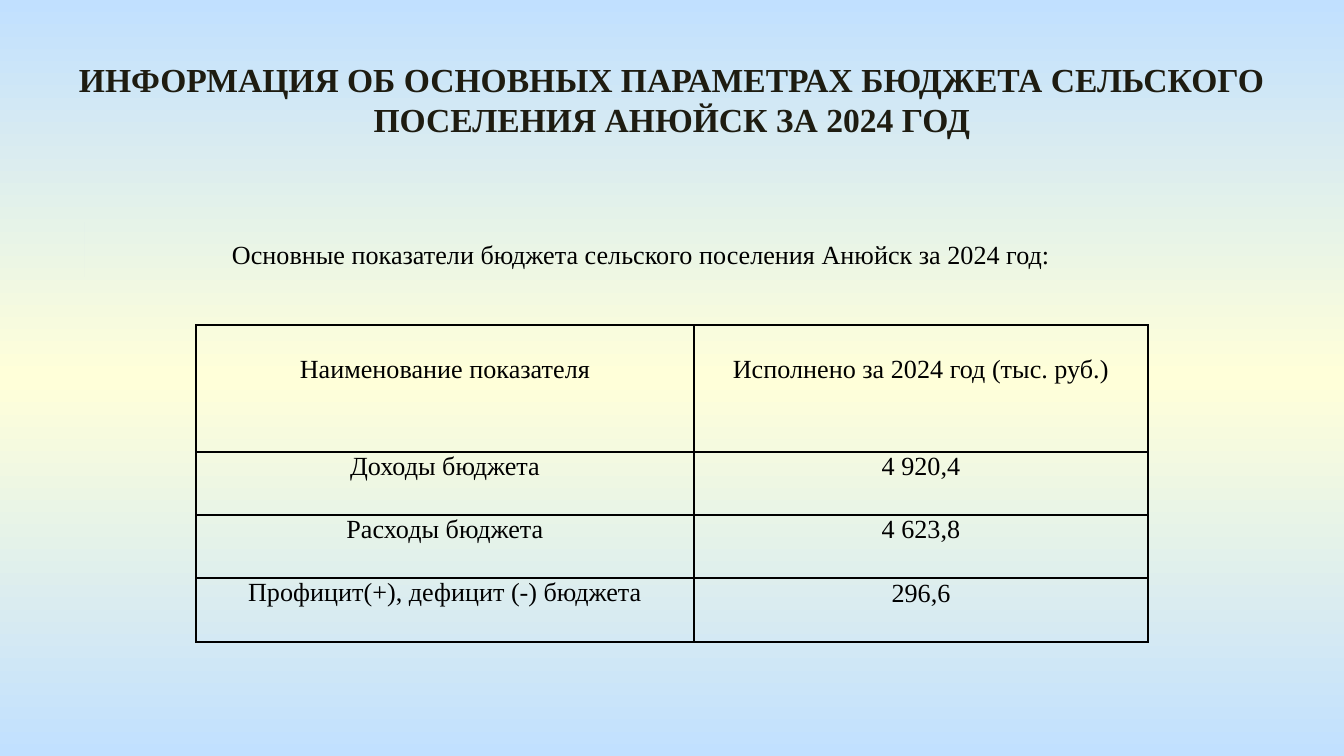
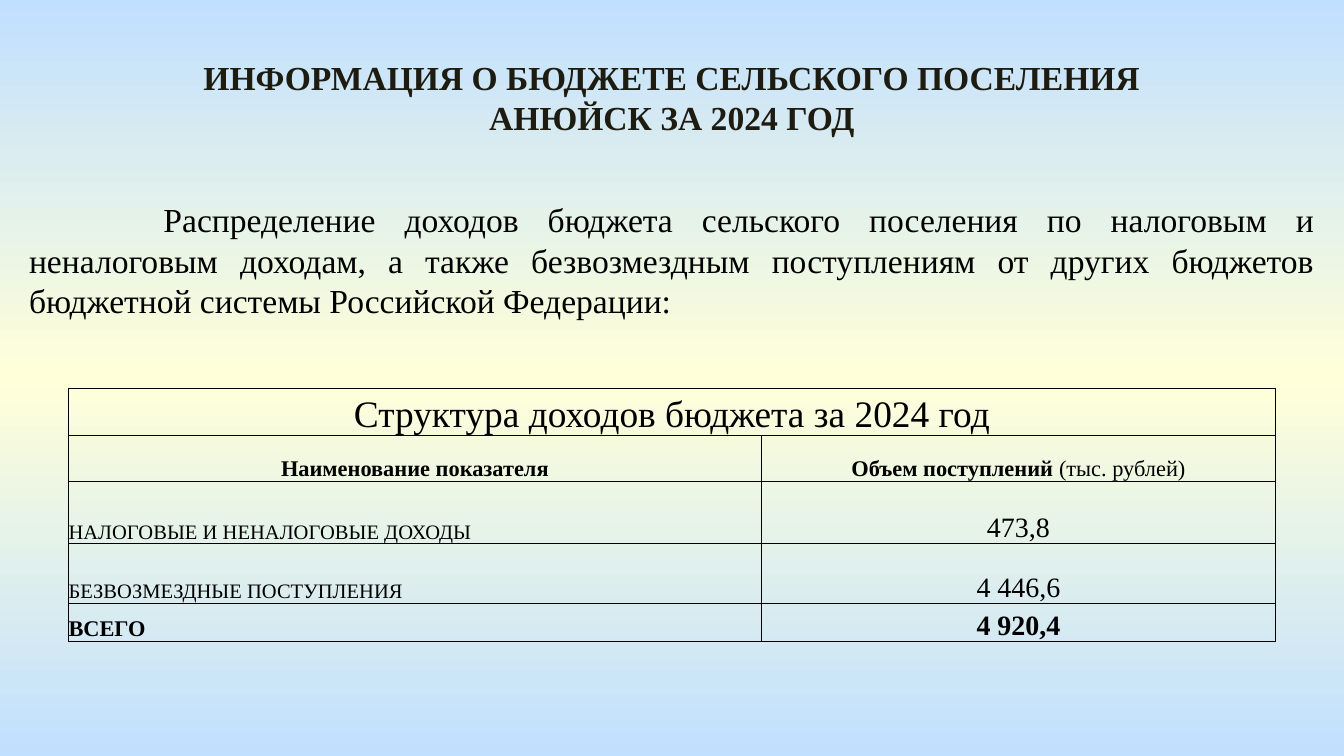
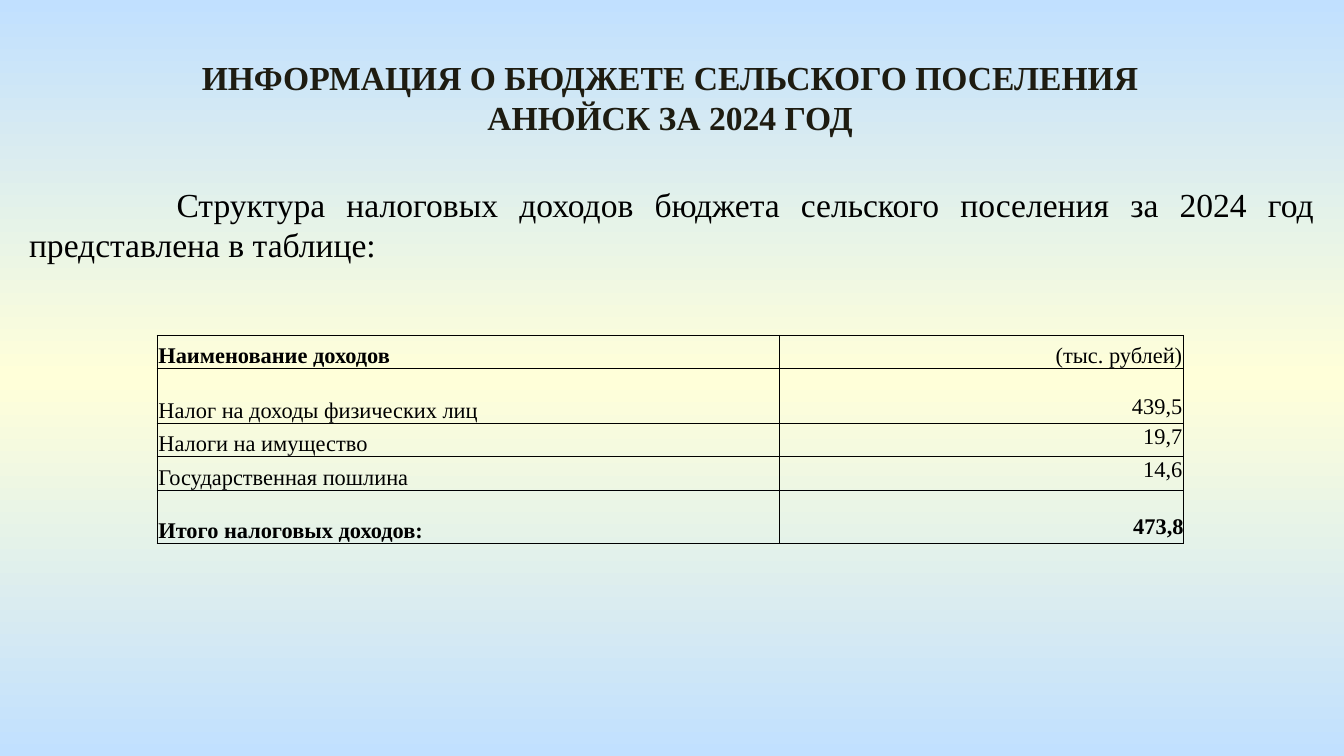
from lxml.etree import SubElement
from pptx import Presentation
from pptx.dml.color import RGBColor
from pptx.enum.shapes import MSO_SHAPE
from pptx.enum.text import MSO_ANCHOR, PP_ALIGN
from pptx.oxml.ns import qn
from pptx.util import Pt

FONT = "Times New Roman"
BLACK = RGBColor(0x00, 0x00, 0x00)
TITLE_COLOR = RGBColor(0x1E, 0x1C, 0x11)
SKY = RGBColor(0xC1, 0xE0, 0xFF)
CREAM = RGBColor(0xFF, 0xFF, 0xD9)
BACKGROUND_STOPS = [(0, SKY), (50, CREAM), (100, SKY)]

LEFT, CENTER, RIGHT, JUSTIFY = (
    PP_ALIGN.LEFT, PP_ALIGN.CENTER, PP_ALIGN.RIGHT, PP_ALIGN.JUSTIFY)
TOP, MIDDLE, BOTTOM = MSO_ANCHOR.TOP, MSO_ANCHOR.MIDDLE, MSO_ANCHOR.BOTTOM

BUDGET_TITLE = "ИНФОРМАЦИЯ О БЮДЖЕТЕ СЕЛЬСКОГО ПОСЕЛЕНИЯ АНЮЙСК ЗА 2024 ГОД"

INDICATOR = dict(size=14, align=CENTER, margins=(5, 0, 5, 0))
INDICATOR_HEAD = dict(INDICATOR, margins=(5, 16, 5, 0))
STRUCTURE_HEAD = dict(size=12, bold=True, align=CENTER, anchor=BOTTOM)
STRUCTURE_NAME = dict(size=11, anchor=BOTTOM)
STRUCTURE_VALUE = dict(size=15, align=CENTER, anchor=BOTTOM)
TAX_NAME = dict(size=12, align=JUSTIFY, anchor=BOTTOM, margins=(0.7, 0.7, 0.7, 0))
TAX_VALUE = dict(size=12, align=RIGHT, margins=(0.7, 0.7, 0.7, 0))
TAX_LOW_VALUE = dict(TAX_VALUE, margins=(0.7, 14, 0.7, 0))

SLIDES = [
    dict(
        title="ИНФОРМАЦИЯ ОБ ОСНОВНЫХ ПАРАМЕТРАХ БЮДЖЕТА СЕЛЬСКОГО ПОСЕЛЕНИЯ АНЮЙСК ЗА 2024 ГОД",
        title_area=(25, 28, 670, 51),
        intro="Основные показатели бюджета сельского поселения Анюйск за 2024 год:",
        intro_area=(45.2, 119.2, 629, 29),
        intro_format=dict(size=14, indent=72, anchor=BOTTOM, panel=True),
        table_corner=(105, 174.1), border=1,
        columns=(266.8, 243.2), rows=(68, 33.8, 33.8, 34.2),
        cells=[
            [("Наименование показателя", INDICATOR_HEAD),
             ("Исполнено за 2024 год (тыс. руб.)", INDICATOR_HEAD)],
            [("Доходы бюджета", INDICATOR), ("4 920,4", INDICATOR)],
            [("Расходы бюджета", INDICATOR), ("4 623,8", INDICATOR)],
            [("Профицит(+), дефицит (-) бюджета", INDICATOR),
             ("296,6", dict(INDICATOR, margins=(0.7, 0.7, 0.7, 0)))],
        ],
    ),
    dict(
        title=BUDGET_TITLE,
        title_area=(81.5, 26.8, 557, 51),
        intro="Распределение доходов бюджета сельского поселения по налоговым и "
              "неналоговым доходам, а также безвозмездным поступлениям от других "
              "бюджетов бюджетной системы Российской Федерации:",
        intro_area=(8.5, 102.6, 703, 73),
        intro_format=dict(size=18, indent=72, align=JUSTIFY, anchor=MIDDLE, panel=True),
        table_corner=(36.7, 208), border=0.5,
        columns=(371.3, 275.3), rows=(25.4, 24.3, 33.5, 31.9, 20.4),
        cells=[
            [("Структура доходов бюджета за 2024 год",
              dict(size=20, align=CENTER, anchor=BOTTOM))],
            [("Наименование показателя", STRUCTURE_HEAD),
             ([("Объем поступлений ", True), ("(тыс. рублей)", False)],
              dict(STRUCTURE_HEAD, margins=(5, 0, 5, 0)))],
            [("НАЛОГОВЫЕ И НЕНАЛОГОВЫЕ ДОХОДЫ", STRUCTURE_NAME),
             ("473,8", STRUCTURE_VALUE)],
            [("БЕЗВОЗМЕЗДНЫЕ ПОСТУПЛЕНИЯ", STRUCTURE_NAME),
             ("4 446,6", STRUCTURE_VALUE)],
            [("ВСЕГО", dict(STRUCTURE_NAME, size=12, bold=True)),
             ("4 920,4", dict(STRUCTURE_VALUE, bold=True))],
        ],
    ),
    dict(
        title=BUDGET_TITLE,
        title_area=(80.6, 26.8, 557, 51),
        intro="Структура налоговых доходов бюджета сельского поселения за 2024 год "
              "представлена в таблице:",
        intro_area=(8.5, 94.5, 703, 51),
        intro_format=dict(size=18, indent=79, align=JUSTIFY, anchor=MIDDLE),
        table_corner=(84.2, 179.7), border=0.5,
        columns=(333.3, 216.6), rows=(17.7, 29.3, 17.7, 18.3, 28.5),
        cells=[
            [("Наименование доходов", dict(TAX_NAME, bold=True)),
             ("(тыс. рублей)", dict(TAX_VALUE, anchor=BOTTOM))],
            [("Налог на доходы физических лиц", TAX_NAME), ("439,5", TAX_LOW_VALUE)],
            [("Налоги на имущество", TAX_NAME), ("19,7", TAX_VALUE)],
            [("Государственная пошлина", TAX_NAME), ("14,6", TAX_VALUE)],
            [("Итого налоговых доходов:", dict(TAX_NAME, bold=True)),
             ("473,8", dict(TAX_LOW_VALUE, bold=True, margins=(0, 13, 0, 0)))],
        ],
    ),
]


def write_text(frame, text, size=18, bold=False, color=BLACK, align=LEFT, indent=0):
    para = frame.paragraphs[0]
    para.alignment = align
    if indent:
        para._p.get_or_add_pPr().set("indent", str(Pt(indent)))
    spans = [(text, bold)] if isinstance(text, str) else text
    for words, heavy in spans:
        span = para.add_run()
        span.text = words
        span.font.name = FONT
        span.font.size = Pt(size)
        span.font.bold = heavy
        span.font.color.rgb = color


def add_text_box(page, area, text, anchor=TOP, panel=False, **text_format):
    place = map(Pt, area)
    if panel:
        box = page.shapes.add_shape(MSO_SHAPE.RECTANGLE, *place)
        box.shadow.inherit = False
        box.line.fill.background()
        box.element.set("useBgFill", "1")
    else:
        box = page.shapes.add_textbox(*place)
    box.text_frame.word_wrap = True
    box.text_frame.vertical_anchor = anchor
    write_text(box.text_frame, text, **text_format)


def paint_background(page):
    fill = page.background.fill
    fill.gradient()
    fill.gradient_angle = 270
    stops = page.element.find(".//" + qn("a:gsLst"))
    for stop in list(stops):
        stops.remove(stop)
    for percent, color in BACKGROUND_STOPS:
        stop = SubElement(stops, qn("a:gs"), pos=str(percent * 1000))
        SubElement(stop, qn("a:srgbClr"), val=str(color))


def style_cell(cell, border):
    properties = cell._tc.get_or_add_tcPr()
    for side in ("a:lnL", "a:lnR", "a:lnT", "a:lnB"):
        line = SubElement(properties, qn(side), w=str(Pt(border)))
        paint = SubElement(line, qn("a:solidFill"))
        SubElement(paint, qn("a:srgbClr"), val=str(BLACK))
    cell.fill.background()


def fill_cell(cell, text, anchor=TOP, margins=(0, 0, 0, 0), **text_format):
    cell.margin_left, cell.margin_top, cell.margin_right, cell.margin_bottom = map(Pt, margins)
    cell.vertical_anchor = anchor
    write_text(cell.text_frame, text, **text_format)


def add_budget_table(page, corner, columns, rows, cells, border):
    table = page.shapes.add_table(
        len(rows), len(columns), *map(Pt, corner), Pt(sum(columns)), Pt(sum(rows))).table
    table.first_row = table.horz_banding = False
    for column, width in zip(table.columns, columns):
        column.width = Pt(width)
    for row, height in zip(table.rows, rows):
        row.height = Pt(height)
    for cell in table.iter_cells():
        style_cell(cell, border)
    for row_index, row_cells in enumerate(cells):
        if len(row_cells) < len(columns):
            table.cell(row_index, 0).merge(table.cell(row_index, len(columns) - 1))
        for column_index, (text, cell_format) in enumerate(row_cells):
            fill_cell(table.cell(row_index, column_index), text, **cell_format)


def main():
    deck = Presentation()
    deck.slide_width, deck.slide_height = Pt(720), Pt(405)
    for content in SLIDES:
        page = deck.slides.add_slide(deck.slide_layouts[6])
        paint_background(page)
        add_text_box(page, content["intro_area"], content["intro"], **content["intro_format"])
        add_text_box(page, content["title_area"], content["title"],
                     bold=True, color=TITLE_COLOR, align=CENTER)
        add_budget_table(page, content["table_corner"], content["columns"],
                         content["rows"], content["cells"], content["border"])
    deck.save("out.pptx")


if __name__ == "__main__":
    main()
